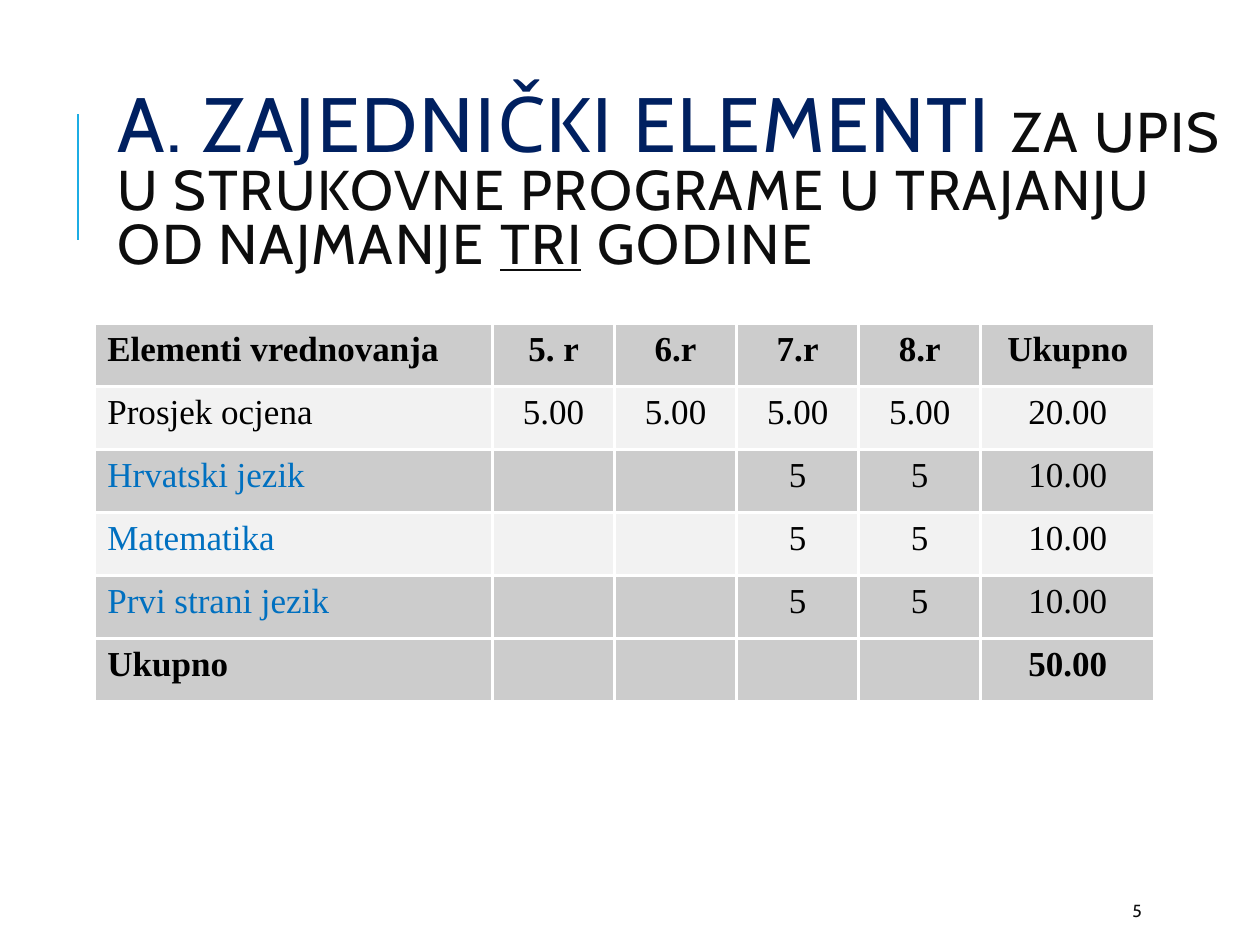
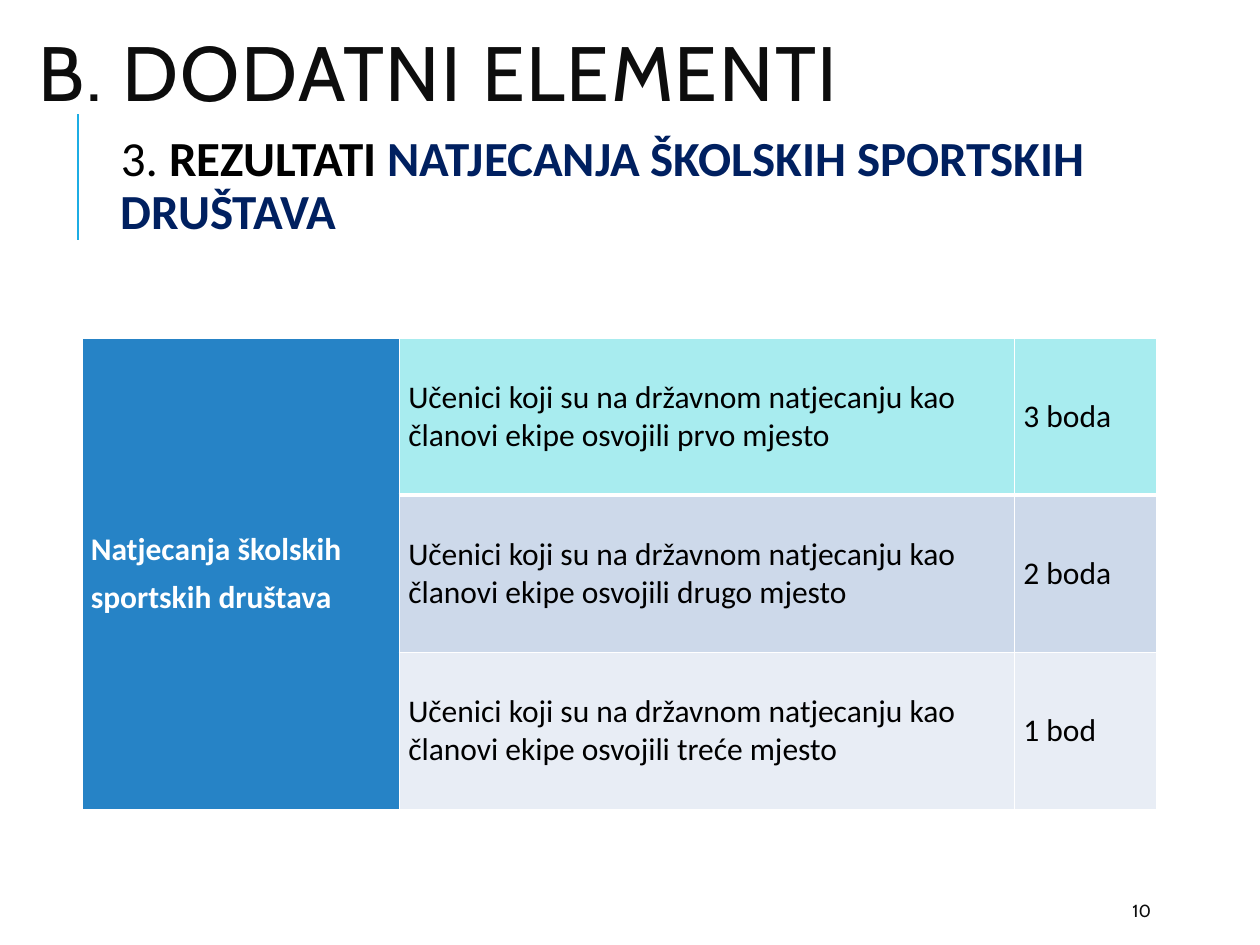
import pptx
import pptx.dml.color
import pptx.enum.shapes
import pptx.enum.text
import pptx.oxml
import pptx.oxml.ns
import pptx.util
from pptx.util import Cm

COLOURS = {
    "white": "FFFFFF", "black": "000000", "ink": "0D0D0D", "navy": "002060",
    "accent": "1CADE4", "subject": "0070C0", "grey": "CCCCCC", "pale": "F2F2F2",
    "group": "2683C6", "first": "A8ECEF", "second": "CDD9EA", "third": "E8EDF5",
}
HEADING_FONT, BODY_FONT, GRADES_FONT = "Cabin", "Calibri", "Times New Roman"
ALIGN = pptx.enum.text.PP_ALIGN
ANCHOR = pptx.enum.text.MSO_ANCHOR


def rgb(name):
    return pptx.dml.color.RGBColor.from_string(COLOURS[name])


class Deck:
    """Holds the shared style and the slide being filled."""

    def __init__(self):
        self.presentation = pptx.Presentation()
        self.presentation.slide_width = Cm(25.4)
        self.presentation.slide_height = Cm(19.05)
        self.slide = None

    def start_slide(self, number):
        layout = self.presentation.slide_layouts[5]
        self.slide = self.presentation.slides.add_slide(layout)
        self.accent_line()
        self.text_box(22.58, 17.98, 2.03, 0.76, [(str(number), "ink", {})],
                      HEADING_FONT, 10, anchor=ANCHOR.MIDDLE)

    def accent_line(self):
        line = self.slide.shapes.add_connector(
            pptx.enum.shapes.MSO_CONNECTOR.STRAIGHT,
            Cm(1.57), Cm(4.83), Cm(1.57), Cm(2.29))
        line.line.color.rgb = rgb("accent")
        line.line.width = pptx.util.Pt(1.5)
        line._element.spPr.append(pptx.oxml.parse_xml(
            f'<a:effectLst {pptx.oxml.ns.nsdecls("a")}/>'))

    def style_run(self, run, font, size, colour, bold=False, underline=False):
        run.font.name = font
        run.font.size = pptx.util.Pt(size)
        run.font.bold = bold
        run.font.underline = underline
        run.font.color.rgb = rgb(colour)

    def add_runs(self, paragraph, parts, font, size):
        """Add (text, colour, options) parts; options may override the size."""
        for text, colour, options in parts:
            run = paragraph.add_run()
            run.text = text
            self.style_run(run, font, colour=colour, **{"size": size, **options})

    def title(self, left, top, parts):
        heading = self.slide.shapes.title
        heading.left, heading.top = Cm(left), Cm(top)
        heading.width, heading.height = Cm(22.86), Cm(3.18)
        frame = heading.text_frame
        frame.word_wrap = True
        frame.auto_size = pptx.enum.text.MSO_AUTO_SIZE.NONE
        frame.vertical_anchor = ANCHOR.MIDDLE
        paragraph = frame.paragraphs[0]
        paragraph.alignment = ALIGN.LEFT
        paragraph.line_spacing = 0.8
        self.add_runs(paragraph, parts, HEADING_FONT, 44)
        for run in paragraph.runs:
            run._r.get_or_add_rPr().set("spc", "100")

    def text_box(self, left, top, width, height, parts, font, size,
                 anchor=ANCHOR.TOP):
        box = self.slide.shapes.add_textbox(Cm(left), Cm(top), Cm(width), Cm(height))
        frame = box.text_frame
        frame.word_wrap = True
        frame.vertical_anchor = anchor
        self.add_runs(frame.paragraphs[0], parts, font, size)
        return frame

    def subtitle(self, parts):
        frame = self.text_box(2.01, 2.57, 21.67, 2.79, parts, BODY_FONT, 28)
        frame.margin_left = frame.margin_right = Cm(0.13)
        frame.margin_top = frame.margin_bottom = Cm(0.13)
        paragraph = frame.paragraphs[0]
        paragraph.line_spacing = 0.9
        paragraph.space_before = pptx.util.Pt(12)
        paragraph.space_after = pptx.util.Pt(2)
        paragraph._p.get_or_add_pPr().set("marL", str(Cm(0.3)))

    def table(self, left, top, widths, row_height, row_count):
        grid = self.slide.shapes.add_table(
            row_count, len(widths), Cm(left), Cm(top),
            Cm(sum(widths)), Cm(row_height * row_count)).table
        grid.first_row = grid.horz_banding = False
        for column, width in zip(grid.columns, widths):
            column.width = Cm(width)
        for row in grid.rows:
            row.height = Cm(row_height)
        return grid

    def cell(self, cell, text, fill, font, size, colour="black", bold=False,
             align=ALIGN.LEFT, border=1, top=None, bottom=None):
        edges = {"L": border, "R": border, "T": top or border, "B": bottom or border}
        properties = cell._tc.get_or_add_tcPr()
        for side, width in edges.items():
            properties.append(pptx.oxml.parse_xml(
                f'<a:ln{side} {pptx.oxml.ns.nsdecls("a")} w="{pptx.util.Pt(width)}">'
                f'<a:solidFill><a:srgbClr val="{COLOURS["white"]}"/></a:solidFill>'
                f'</a:ln{side}>'))
        cell.fill.solid()
        cell.fill.fore_color.rgb = rgb(fill)
        cell.text_frame.text = text
        for paragraph in cell.text_frame.paragraphs:
            paragraph.alignment = align
            for run in paragraph.runs:
                self.style_run(run, font, size, colour, bold)

    def spaced_cell(self, cell, text, fill, **style):
        """Fill a cell that is centred vertically, with air around paragraphs."""
        self.cell(cell, text, fill, BODY_FONT, 18, **style)
        cell.vertical_anchor = ANCHOR.MIDDLE
        cell.margin_left = cell.margin_right = Cm(0.18)
        cell.margin_top = cell.margin_bottom = 0
        for paragraph in cell.text_frame.paragraphs:
            paragraph.space_before = paragraph.space_after = pptx.util.Pt(3)


def common_elements(deck):
    deck.start_slide(5)
    deck.title(2.11, 2.13, [
        ("A. ZAJEDNIČKI ELEMENTI ", "navy", {}),
        ("ZA UPIS U STRUKOVNE PROGRAME U TRAJANJU OD NAJMANJE ", "ink", {"size": 32}),
        ("TRI", "ink", {"size": 32, "underline": True}),
        (" GODINE", "ink", {"size": 32}),
    ])
    subjects = ["Hrvatski jezik", "Matematika", "Prvi strani jezik"]
    rows = [
        ["Elementi vrednovanja", "5. r", "6.r", "7.r", "8.r", "Ukupno"],
        ["Prosjek ocjena"] + ["5.00"] * 4 + ["20.00"],
        *[[subject, "", "", "5", "5", "10.00"] for subject in subjects],
        ["Ukupno", "", "", "", "", "50.00"],
    ]
    last = len(rows) - 1
    grades = deck.table(1.91, 6.53, [8.02] + [2.46] * 4 + [3.51], 1.27, len(rows))
    for r, row in enumerate(rows):
        for c, text in enumerate(row):
            deck.cell(grades.cell(r, c), text,
                      "pale" if r % 2 and r < last else "grey",
                      GRADES_FONT, 20,
                      colour="subject" if text in subjects else "black",
                      bold=r in (0, last),
                      align=ALIGN.CENTER if c else ALIGN.LEFT, border=2)


def additional_elements(deck):
    deck.start_slide(10)
    deck.title(0.53, 0, [("B. DODATNI ELEMENTI", "ink", {})])
    deck.subtitle([
        ("3. ", "black", {}),
        ("REZULTATI ", "black", {"bold": True}),
        ("NATJECANJA ŠKOLSKIH SPORTSKIH DRUŠTAVA", "navy", {"bold": True}),
    ])
    places = [("prvo", "3 boda", "first"), ("drugo", "2 boda", "second"),
              ("treće", "1 bod", "third")]
    points = deck.table(1.65, 6.81, [6.4, 12.4, 2.87], 3.17, len(places))
    points.cell(0, 0).merge(points.cell(len(places) - 1, 0))
    deck.spaced_cell(points.cell(0, 0), "Natjecanja školskih\nsportskih društava",
                     "group", colour="white", bold=True)
    for r, (place, score, fill) in enumerate(places):
        result = ("Učenici koji su na državnom natjecanju kao članovi ekipe "
                  f"osvojili {place} mjesto")
        for c, text in enumerate((result, score), start=1):
            deck.spaced_cell(points.cell(r, c), text, fill,
                             top=3 if r == 1 else None,
                             bottom=3 if r == 0 else None)


def main():
    deck = Deck()
    common_elements(deck)
    additional_elements(deck)
    deck.presentation.save("out.pptx")


if __name__ == "__main__":
    main()
